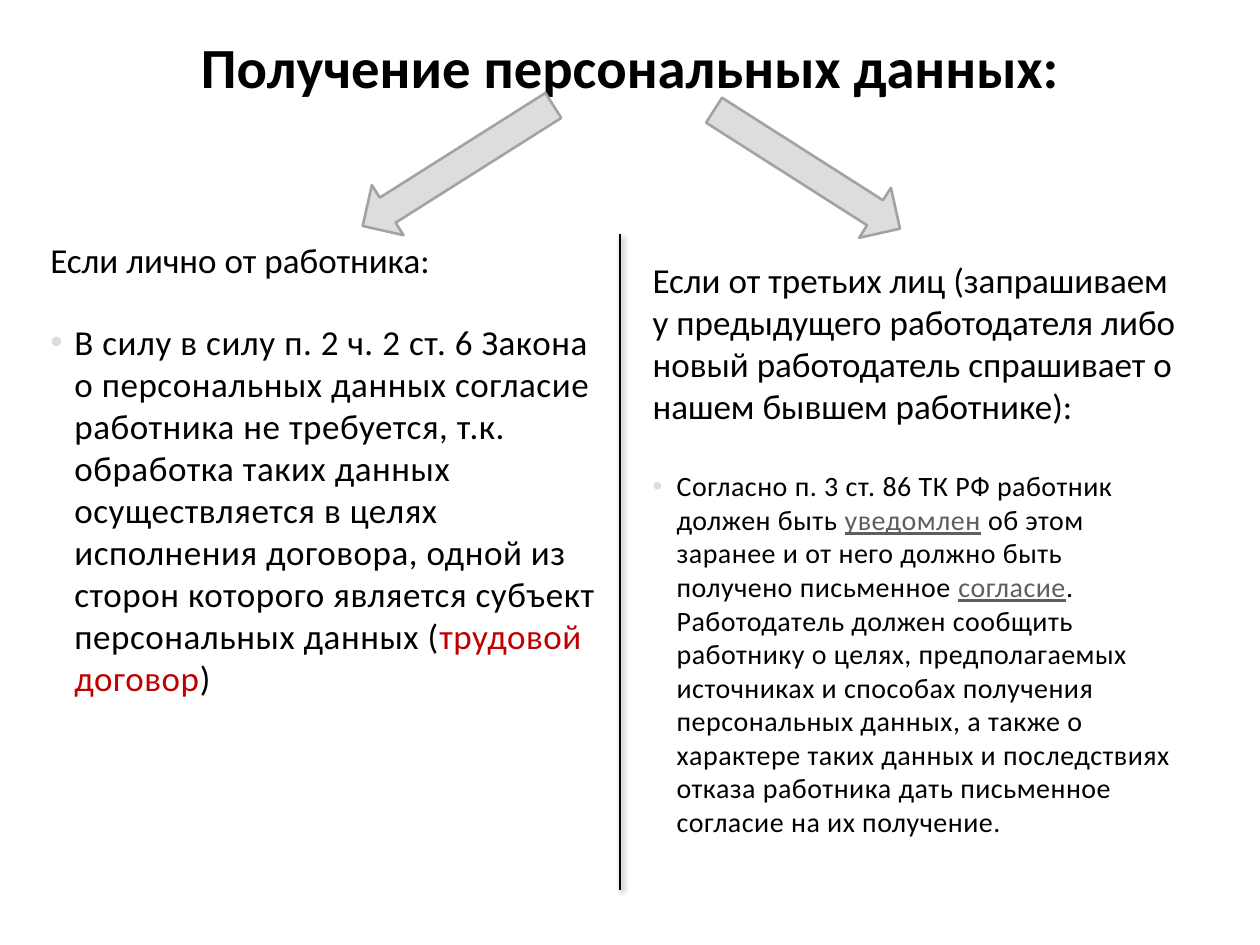
import pptx
import pptx.util
import pptx.dml.color
import pptx.enum.shapes
import pptx.enum.text
import lxml.etree
from pptx.util import Inches, Pt

BLACK, RED, GREY, LIGHT, EDGE = "000000", "C00000", "5F5F5F", "DDDDDD", "A3A3A3"
ANCHOR = pptx.enum.text.MSO_ANCHOR
A = "http://schemas.openxmlformats.org/drawingml/2006/main"

TITLE = "Получение персональных данных:"
LEFT_HEAD = "Если лично от работника:"
RIGHT_HEAD = ("Если от третьих лиц (запрашиваем у предыдущего работодателя либо "
              "новый работодатель спрашивает о нашем бывшем работнике):")
# Runs: text, colour, underlined
LEFT_BODY = [
    ("В силу в силу п. 2 ч. 2 ст. 6 Закона о персональных данных согласие работника "
     "не требуется, т.к. обработка таких данных осуществляется в целях исполнения "
     "договора, одной из сторон которого является субъект персональных данных (",
     BLACK, False),
    ("трудовой договор", RED, False),
    (")", BLACK, False),
]
RIGHT_BODY = [
    ("Согласно п. 3 ст. 86 ТК РФ работник должен быть ", BLACK, False),
    ("уведомлен", GREY, True),
    (" об этом заранее и от него должно быть получено письменное ", BLACK, False),
    ("согласие", GREY, True),
    (". Работодатель должен сообщить работнику о целях, предполагаемых источниках "
     "и способах получения персональных данных, а также о характере таких данных и "
     "последствиях отказа работника дать письменное согласие на их получение.",
     BLACK, False),
]
# Placeholder index, left, top, width, height, runs, size
HEADS = [
    (1, 0.3, 1.78, 4.65, 0.56, [(LEFT_HEAD, BLACK, False)], 20),
    (3, 5.08, 1.84, 4.42, 1.76, [(RIGHT_HEAD, BLACK, False)], 20),
]
BODIES = [
    (2, 0.3, 2.49, 4.65, 4.33, LEFT_BODY, 20),
    (4, 5.08, 3.67, 4.42, 3.62, RIGHT_BODY, 16),
]
# Left, top, width, height, rotation
ARROWS = [(5.53, 1.11, 1.75, 0.47, 32.5), (2.74, 1.08, 1.79, 0.47, 147.7)]


def rgb(value):
    return pptx.dml.color.RGBColor.from_string(value)


def add_xml(parent, xml):
    """Append a DrawingML fragment whose tags use the a: prefix."""
    root = lxml.etree.fromstring(f'<a:x xmlns:a="{A}">{xml}</a:x>')
    for child in list(root):
        parent.append(child)


def fill_placeholder(s, idx, left, top, width, height, runs, size,
                     anchor=ANCHOR.TOP, bold=False):
    """Place a placeholder and write one paragraph of coloured runs."""
    sp = s.placeholders[idx]
    sp.left, sp.top, sp.width, sp.height = map(Inches, (left, top, width, height))
    tf = sp.text_frame
    tf.word_wrap = True
    tf.auto_size = pptx.enum.text.MSO_AUTO_SIZE.NONE
    tf.vertical_anchor = anchor
    p = tf.paragraphs[0]
    p.space_before = Pt(6)
    for text, color, underlined in runs:
        r = p.add_run()
        r.text = text
        r.font.name = "Calibri"
        r.font.size = Pt(size)
        r.font.bold = bold
        r.font.underline = underlined
        r.font.color.rgb = rgb(color)
    return p


def add_bullet(p):
    """Give the paragraph a light bullet, a hanging indent and wider letters."""
    pPr = p._p.get_or_add_pPr()
    pPr.set("marL", str(Inches(0.19)))
    pPr.set("indent", str(-Inches(0.19)))
    add_xml(pPr, f'<a:buClr><a:srgbClr val="{LIGHT}"/></a:buClr>'
                 '<a:buFont typeface="Arial"/><a:buChar char="•"/>')
    for r in p.runs:
        r.font._element.set("spc", "30")


def add_arrow(s, left, top, width, height, rotation):
    sp = s.shapes.add_shape(pptx.enum.shapes.MSO_SHAPE.RIGHT_ARROW,
                            *map(Inches, (left, top, width, height)))
    sp.rotation = rotation
    sp.shadow.inherit = False
    sp.fill.solid()
    sp.fill.fore_color.rgb = rgb(LIGHT)
    sp.line.color.rgb = rgb(EDGE)
    sp.line.width = Pt(1.5)


def add_divider(s, x, top, bottom):
    line = s.shapes.add_connector(pptx.enum.shapes.MSO_CONNECTOR.STRAIGHT,
                                  *map(Inches, (x, bottom, x, top)))
    line.line.color.rgb = rgb(BLACK)
    line.line.width = Pt(1.5)
    add_xml(line._element.spPr,
            f'<a:effectLst><a:outerShdw blurRad="{Pt(3)}" dist="{Pt(2)}" '
            f'dir="{45 * 60000}" rotWithShape="0"><a:srgbClr val="{BLACK}">'
            '<a:alpha val="40000"/></a:srgbClr></a:outerShdw></a:effectLst>')


def main():
    prs = pptx.Presentation()
    prs.slide_width, prs.slide_height = Inches(10), Inches(7.5)
    s = prs.slides.add_slide(prs.slide_layouts.get_by_name("Comparison"))

    title = fill_placeholder(s, 0, 0.5, 0.22, 9, 0.62, [(TITLE, BLACK, False)], 32.4,
                             ANCHOR.BOTTOM, bold=True)
    title.alignment = pptx.enum.text.PP_ALIGN.CENTER
    title.space_before = Pt(4)
    for body in BODIES:
        add_bullet(fill_placeholder(s, *body))
    for head in HEADS:
        fill_placeholder(s, *head, anchor=ANCHOR.MIDDLE)
    for arrow in ARROWS:
        add_arrow(s, *arrow)
    add_divider(s, 4.92, 1.86, 7.06)
    prs.save("out.pptx")


if __name__ == "__main__":
    main()
